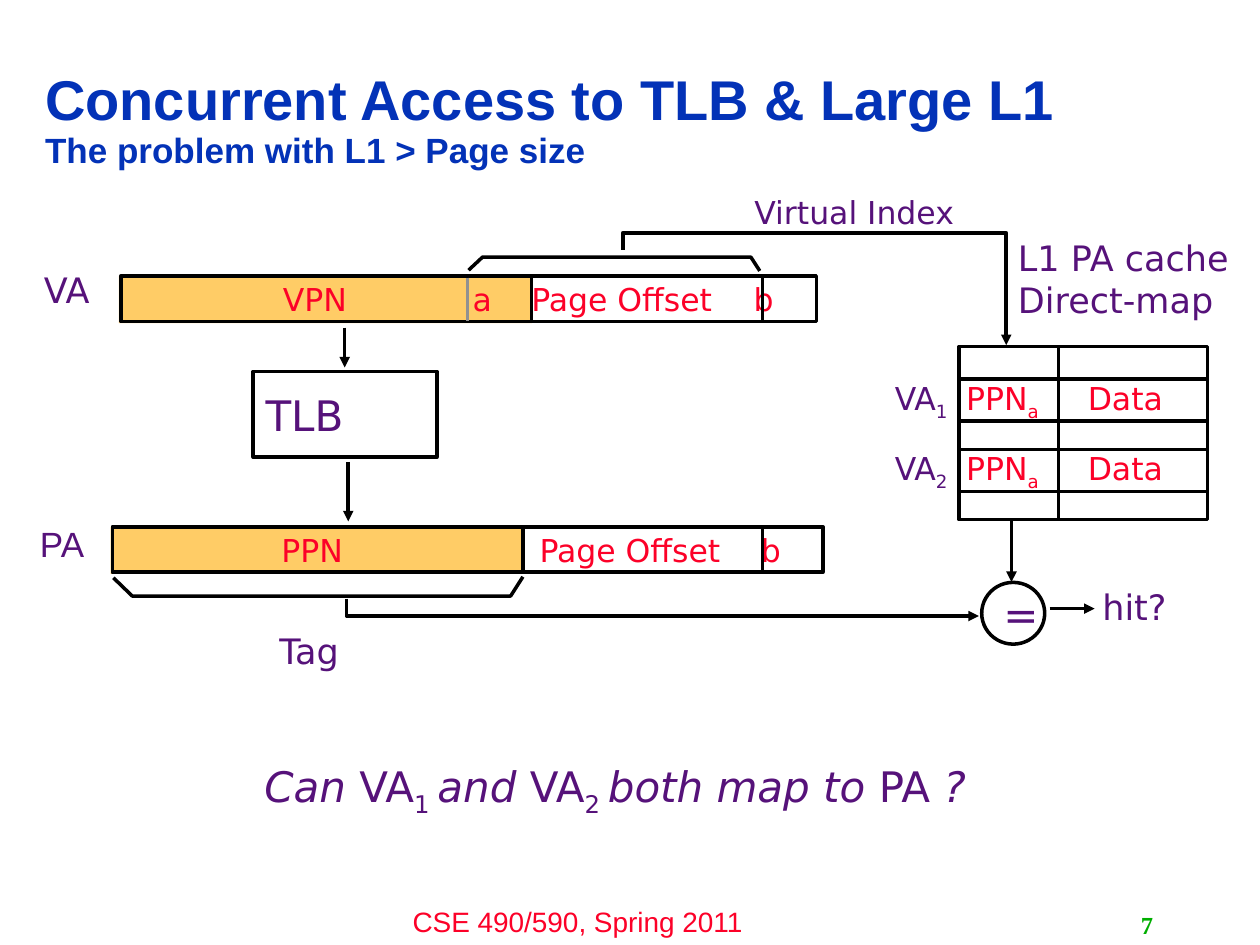
from lxml.etree import SubElement
from pptx import Presentation
from pptx.dml.color import RGBColor
from pptx.enum.shapes import MSO_CONNECTOR, MSO_SHAPE
from pptx.enum.text import MSO_ANCHOR, PP_ALIGN
from pptx.oxml.ns import qn
from pptx.util import Pt

BLACK, WHITE, GREY = "000000", "FFFFFF", "919191"
BLUE, PURPLE, RED, GREEN, AMBER = "0332B7", "56127A", "FC0128", "00AE00", "FFCC66"


def colour(value):
    return RGBColor.from_string(value)


class Diagram:
    font = "DejaVu Sans"
    line_width = 2

    def __init__(self, slide):
        self.slide = slide

    def outline(self, shape, value, arrow=False):
        shape.line.color.rgb = colour(value)
        shape.line.width = Pt(self.line_width)
        if arrow:
            line = shape.line._get_or_add_ln()
            SubElement(line, qn("a:tailEnd"), type="triangle")

    def fill_text(self, shape, paragraphs, size, value=PURPLE, font=None, bold=False,
                  align=PP_ALIGN.LEFT, anchor=MSO_ANCHOR.TOP, wrap=False, tabs=()):
        """Each paragraph is a string or a list of (text, style) runs."""
        frame = shape.text_frame
        frame.word_wrap = wrap
        frame.vertical_anchor = anchor
        for index, content in enumerate(paragraphs):
            paragraph = frame.add_paragraph() if index else frame.paragraphs[0]
            paragraph.alignment = align
            if tabs:
                tab_list = SubElement(paragraph._p.get_or_add_pPr(), qn("a:tabLst"))
                for position in tabs:
                    SubElement(tab_list, qn("a:tab"), pos=str(Pt(position)), algn="l")
            paragraph.font.name = font or self.font
            paragraph.font.size = Pt(size)
            paragraph.font.bold = bold
            paragraph.font.color.rgb = colour(value)
            runs = [(content, "")] if isinstance(content, str) else content
            for text, style in runs:
                run = paragraph.add_run()
                run.text = text
                if style == "italic":
                    run.font.italic = True
                elif style == "sub":
                    run._r.get_or_add_rPr().set("baseline", "-25000")

    def text(self, left, top, width, height, paragraphs, size, **style):
        box = self.slide.shapes.add_textbox(Pt(left), Pt(top), Pt(width), Pt(height))
        self.fill_text(box, paragraphs, size, **style)
        return box

    def shape(self, left, top, width, height, kind=MSO_SHAPE.RECTANGLE,
              fill=None, line=BLACK):
        shape = self.slide.shapes.add_shape(kind, Pt(left), Pt(top), Pt(width), Pt(height))
        shape.shadow.inherit = False
        if fill:
            shape.fill.solid()
            shape.fill.fore_color.rgb = colour(fill)
        else:
            shape.fill.background()
        if line:
            self.outline(shape, line)
        else:
            shape.line.fill.background()
        return shape

    def line(self, x1, y1, x2, y2, value=BLACK, arrow=False):
        connector = self.slide.shapes.add_connector(
            MSO_CONNECTOR.STRAIGHT, Pt(x1), Pt(y1), Pt(x2), Pt(y2))
        self.outline(connector, value, arrow)
        SubElement(connector._element.spPr, qn("a:effectLst"))

    def bent_line(self, points, arrow=False):
        start, *others = [(Pt(x), Pt(y)) for x, y in points]
        builder = self.slide.shapes.build_freeform(*start)
        builder.add_line_segments(others, close=False)
        shape = builder.convert_to_shape()
        shape.shadow.inherit = False
        shape.fill.background()
        self.outline(shape, BLACK, arrow)

    def address_bar(self, left, top, width, shaded, label, tabs, dividers):
        """An address split into a shaded page number and a page offset."""
        self.shape(left - 1, top, shaded, 27, fill=AMBER, line=None)
        bar = self.shape(left, top, width, 26)
        self.fill_text(bar, [label], 18, value=RED, anchor=MSO_ANCHOR.MIDDLE,
                       wrap=True, tabs=tabs)
        for x, value in dividers:
            self.line(x, top + 1, x, top + 26, value)


def main():
    presentation = Presentation()
    presentation.slide_width, presentation.slide_height = Pt(720), Pt(540)
    slide = presentation.slides.add_slide(presentation.slide_layouts[6])
    diagram = Diagram(slide)

    # Title and footer
    title = diagram.text(18.7, 33.1, 695.5, 72.7, ["Concurrent Access to TLB & Large L1"],
                         32, value=BLUE, font="Arial", bold=True,
                         anchor=MSO_ANCHOR.MIDDLE, wrap=True)
    heading = title.text_frame.paragraphs[0]
    heading.line_spacing = 0.9
    heading.add_line_break()
    subtitle = heading.add_run()
    subtitle.text = "The problem with L1 > Page size"
    subtitle.font.size = Pt(20)
    diagram.text(210.2, 513.4, 239.8, 26.6, ["CSE 490/590, Spring 2011"], 16,
                 value=RED, font="Arial", align=PP_ALIGN.CENTER, wrap=True)
    diagram.text(516.2, 517, 149.8, 23, ["7"], 14, value=GREEN,
                 font="Times New Roman", bold=True, align=PP_ALIGN.RIGHT,
                 anchor=MSO_ANCHOR.MIDDLE, wrap=True)

    # Virtual and physical addresses
    diagram.address_bar(69, 157.7, 397.5, 236, "\tVPN\ta\tPage Offset\tb",
                        (85.5, 194, 227.5, 354.5),
                        [(267.1, GREY), (303.8, BLACK), (435.6, BLACK)])
    diagram.address_bar(64.2, 301, 406, 236, "\tPPN\tPage Offset\tb",
                        (89.5, 237, 363.5), [(298.8, BLACK), (435.6, BLACK)])

    # Translation
    tlb = diagram.shape(144.7, 212.2, 105, 49)
    diagram.fill_text(tlb, ["TLB"], 24, anchor=MSO_ANCHOR.MIDDLE)
    diagram.line(197, 187.2, 197, 210, arrow=True)
    diagram.line(199, 264, 199, 298, arrow=True)

    # Virtual index and tag: brackets and their arrows
    diagram.bent_line([(267.8, 154.4), (275.8, 146.9), (429.1, 146.9), (434.2, 154.8)])
    diagram.bent_line([(355.9, 142.6), (355.9, 133), (575, 133), (575, 197.2)], arrow=True)
    diagram.bent_line([(64.8, 330.2), (75.6, 340.6), (291.8, 340.6), (298.8, 329.6)])
    diagram.bent_line([(198, 342), (198, 352), (559.4, 352)], arrow=True)

    # Cache with two aliased entries
    diagram.shape(548, 198, 142, 99)
    diagram.line(604.8, 198, 604.8, 296)
    for number, top in enumerate((216.5, 256.8), start=1):
        for y in (top, top + 24):
            diagram.line(548.5, y, 690.5, y)
        diagram.text(545, top - 3.5, 131, 29,
                     [[("PPN", ""), ("a", "sub"), ("\tData", "")]], 18,
                     value=RED, wrap=True, tabs=(69.5,))
        diagram.text(504.3, top - 3.5, 47, 29, [[("VA", ""), (str(number), "sub")]], 18)

    # Tag comparison
    diagram.line(578, 298, 578, 332.6, arrow=True)
    comparator = diagram.shape(561, 332.8, 36, 35.3, MSO_SHAPE.OVAL, fill=WHITE)
    diagram.fill_text(comparator, ["="], 24, anchor=MSO_ANCHOR.MIDDLE)
    diagram.line(599.8, 347.8, 625.5, 347.8, arrow=True)

    # Labels
    diagram.text(152.6, 356.4, 51, 31, ["Tag"], 20)
    diagram.text(18, 149.8, 42, 31, ["VA"], 20)
    diagram.text(15.8, 295.2, 41, 31, ["PA"], 20, font="Arial")
    diagram.text(424, 106.6, 131, 29, ["Virtual Index"], 18)
    diagram.text(574.6, 131.8, 135.4, 54.7, ["L1 PA cache", "Direct-map"], 20)
    diagram.text(622.8, 331.2, 51, 31, ["hit?"], 20)

    # Question
    question = [("Can", "italic"), (" VA", ""), ("1 ", "sub"), ("and", "italic"),
                (" VA", ""), ("2 ", "sub"), ("both map to", "italic"),
                (" PA ", ""), ("?", "italic")]
    diagram.text(144, 431.3, 442, 36, [question], 24)

    presentation.save("out.pptx")


if __name__ == "__main__":
    main()
